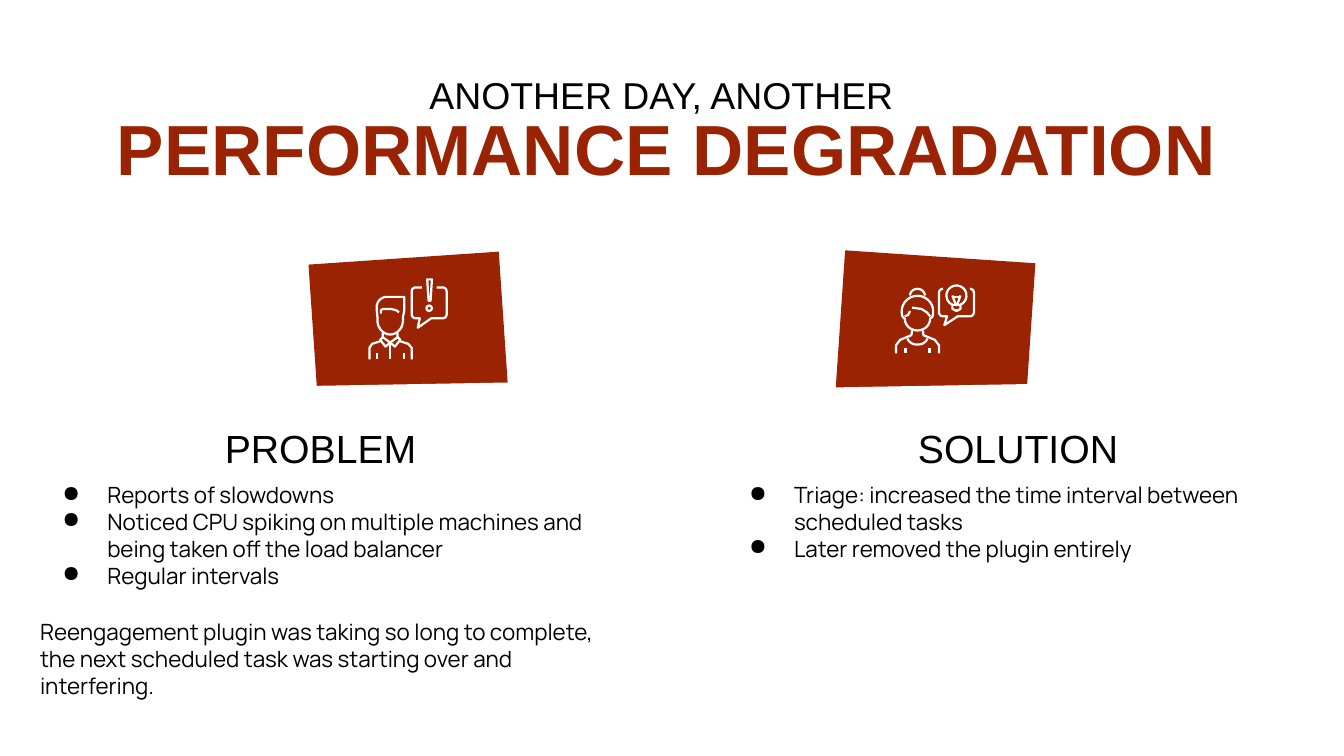
from math import cos, radians, sin
from lxml.etree import SubElement
from pptx import Presentation
from pptx.dml.color import RGBColor as RGB
from pptx.enum.shapes import MSO_SHAPE as SHAPE
from pptx.enum.text import MSO_ANCHOR as ANCHOR, PP_ALIGN as ALIGN
from pptx.oxml.ns import qn
from pptx.util import Pt

HEX = {"red": "992302", "white": "FFFFFF", "black": "000000"}
COLOR = {name: RGB.from_string(code) for name, code in HEX.items()}

deck = Presentation()
deck.slide_width, deck.slide_height = Pt(720), Pt(405)
slide = deck.slides.add_slide(deck.slide_layouts[6])
shapes = slide.shapes


def arc(x, y, rx, ry, start, end):
    """Points of an elliptic arc; degrees run clockwise from the right."""
    turns = [radians(start + (end - start) * i / 16) for i in range(17)]
    return [(x + rx * cos(t), y + ry * sin(t)) for t in turns]


def box(x, y, w, h, anchor=ANCHOR.TOP):
    """Add a wrapping text box and return its frame."""
    frame = shapes.add_textbox(Pt(x), Pt(y), Pt(w), Pt(h)).text_frame
    frame.word_wrap = True
    frame.vertical_anchor = anchor
    frame.margin_left = frame.margin_right = Pt(7.2)
    frame.margin_top = frame.margin_bottom = Pt(7.2)
    return frame


# Tilted red plates, their lower edges cut by white panels
plates = [
    (167.8, 138.2, 102.2, 77.8, -3.9, "red"),
    (450, 137.5, 102.2, 77.8, 3.9, "red"),
    (383.8, 205.9, 316.8, 190, -1, "white"),
    (388.8, 214.6, 316.8, 180, 1, "white"),
    (13.7, 217.4, 316.8, 177.8, 1, "white"),
    (20.2, 206.6, 316.8, 177.8, -1, "white"),
]
for x, y, w, h, tilt, color in plates:
    plate = shapes.add_shape(SHAPE.RECTANGLE, Pt(x), Pt(y), Pt(w), Pt(h))
    plate.rotation = tilt
    plate.shadow.inherit = False
    plate.fill.solid()
    plate.fill.fore_color.rgb = COLOR[color]
    plate.line.fill.background()

# Heading
frame = box(20.2, 35.3, 673.9, 95.8)
para = frame.paragraphs[0]
para.alignment = ALIGN.CENTER
para.line_spacing = 0.85
para.font.name = "Arial"
lead = para.add_run()
lead.text = "ANOTHER DAY, ANOTHER "
lead.font.size = Pt(20)
lead.font.color.rgb = COLOR["black"]
para.add_line_break()
main = para.add_run()
main.text = "PERFORMANCE DEGRADATION"
main.font.size = Pt(38)
main.font.bold = True
main.font.color.rgb = COLOR["red"]

# Two columns: title, bullets, closing remark
columns = [
    ("PROBLEM", 20.2, 303.1, 14.4,
     ["Reports of slowdowns",
      "Noticed CPU spiking on multiple machines and being taken off the load balancer",
      "Regular intervals"],
     "Reengagement plugin was taking so long to complete, the next scheduled "
     "task was starting over and interfering."),
    ("SOLUTION", 396.7, 297.4, 382.3,
     ["Triage: increased the time interval between scheduled tasks",
      "Later removed the plugin entirely"], None),
]
for title, x, width, left, points, remark in columns:
    para = box(x, 222.5, width, 37.4, ANCHOR.BOTTOM).paragraphs[0]
    para.text = title
    para.alignment = ALIGN.CENTER
    para.font.name, para.font.size = "Arial", Pt(21)
    para.font.color.rgb = COLOR["black"]

    frame = box(left, 250.6, 319.7, 137)
    for i, line in enumerate(points + ([remark] if remark else [])):
        para = frame.add_paragraph() if i else frame.paragraphs[0]
        para.text = line
        if line == remark:
            para.space_before = para.space_after = Pt(16)
        else:
            props = para._p.get_or_add_pPr()
            props.set("marL", str(Pt(36)))
            props.set("indent", str(Pt(-24)))
            SubElement(props, qn("a:buChar")).set("char", "●")
        para.font.name, para.font.size = "Manrope", Pt(12)
        para.font.color.rgb = COLOR["black"]

# Line icons: each part is a list of strokes, in hundredths of an inch
man = [
    [[(283.5, 233.5), (283.5, 231), (285, 230), (291, 230), (295, 231), (297, 232.5)]],
    [[(301, 221), (301, 231), (300, 236)] + arc(290.5, 238.5, 9.5, 10.5, 0, 180)
     + [(281, 236), (280.5, 231)] + arc(288, 228.5, 7.5, 7.5, 180, 270) + [(301, 221)],
     [(285, 248), (285, 251), (290.5, 255), (296, 251), (296, 248)],
     [(285, 251), (283, 253), (287, 258), (290.5, 255), (294, 258), (298, 253), (296, 251)],
     [(283, 254), (277, 256), (275, 259), (275, 267.5)],
     [(298, 254), (304, 256), (306.5, 259), (306.5, 267.5)],
     [(290.5, 255), (290.5, 267.5)]],
    [[(280.5, 263), (280.5, 267)]],
    [[(301, 263), (301, 267)]],
    [[(325, 214)] + arc(329.5, 217, 3, 3, 270, 360) + arc(329.5, 234, 3, 3, 0, 90)
     + [(321, 237), (311, 244), (312.5, 237)] + arc(309.5, 234, 3, 3, 90, 180)
     + arc(309.5, 217, 3, 3, 180, 270) + [(314, 214)]],
    [[(318, 208), (321.5, 208), (320.5, 224), (319, 224), (318, 208)]],
    [arc(319.5, 229.5, 2, 2, 0, 360)],
]
woman = [
    [arc(712, 220, 7.5, 7.5, 115, 425),
     [(709, 226), (709, 230), (711, 231), (713, 231), (715, 230), (715, 226)],
     [(709, 220), (711.5, 227), (712.5, 227), (715, 220)],
     [(709.5, 221), (714.5, 221)], [(709, 227), (715, 227)], [(712, 231), (712, 232)]],
    [arc(683, 232, 11.8, 11.8, 160, 380) + arc(683, 237, 9.5, 9, 0, 180) + [(672, 236)],
     arc(683, 220, 5.5, 5, 180, 360),
     [(679, 229), (686, 230), (690, 232.5), (692.5, 235.5)],
     [(677.5, 231.5), (676, 234.5), (673.5, 235.5)],
     [(679, 246), (678.5, 249.5), (670, 253), (667, 257), (667, 263)],
     [(687, 246), (687.5, 249.5), (696, 253), (699, 257), (699, 263)],
     arc(683, 251, 7.5, 5.5, 10, 170)],
    [[(674, 259), (674, 263)]],
    [[(692, 259), (692, 263)]],
    [[(702, 215)] + arc(702, 218, 3, 3, 270, 180) + arc(702, 232.5, 3, 3, 180, 90)
     + [(705, 235.5), (703, 242), (713, 235.5)] + arc(722, 232.5, 3, 3, 90, 0)
     + arc(722, 218, 3, 3, 0, -90)],
]
for part in man + woman:
    pen = None
    for stroke in part:
        dots = [(10 * x, 10 * y) for x, y in stroke]
        if pen:
            pen.move_to(*dots[0])
        else:
            pen = shapes.build_freeform(*dots[0], scale=Pt(0.072))
        pen.add_line_segments(dots[1:], close=False)
    icon = pen.convert_to_shape()
    icon.shadow.inherit = False
    icon.fill.background()
    icon.line.color.rgb = COLOR["white"]
    icon.line.width = Pt(1.2)

deck.save("out.pptx")
